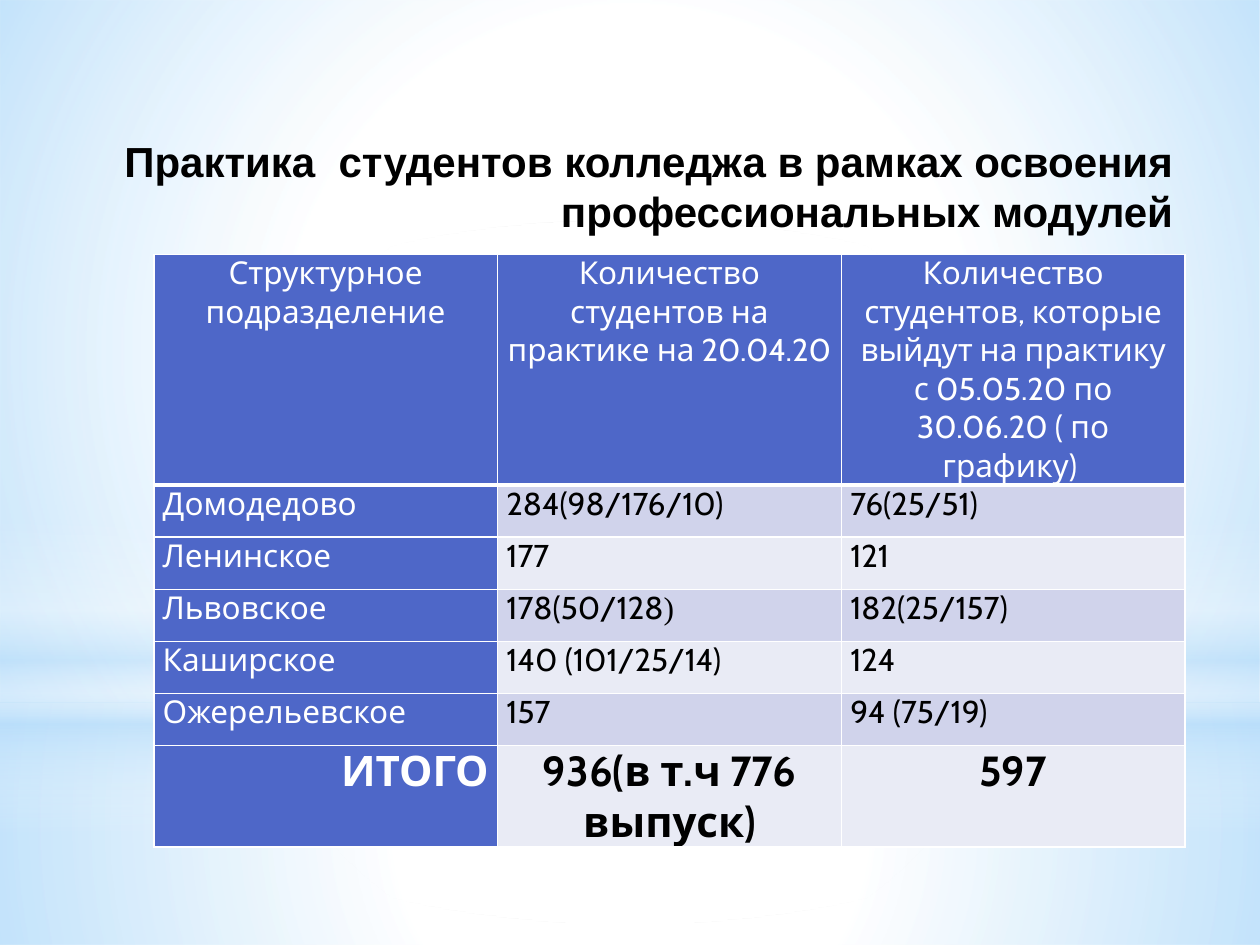
import pptx
import pptx.dml.color
import pptx.enum.shapes
import pptx.enum.text
import pptx.oxml
import pptx.oxml.ns
import pptx.util
from dataclasses import dataclass

Cm = pptx.util.Cm
Pt = pptx.util.Pt
ALIGN = pptx.enum.text.PP_ALIGN
SHAPE = pptx.enum.shapes.MSO_SHAPE
NS = pptx.oxml.ns.nsdecls("a")


@dataclass(frozen=True)
class Theme:
    white: str = "FFFFFF"
    black: str = "000000"
    sky: str = "B4DCFA"
    accent: str = "4E67C8"
    bands: tuple = ("D0D3EB", "E9EBF5")
    title_font: str = "Arial"
    body_font: str = "Cabin"
    bracket_font: str = "Times New Roman"
    large: int = 24
    body: int = 18


class Deck:
    def __init__(self, prs, theme):
        self.theme = theme
        self.s = prs.slides.add_slide(prs.slide_layouts[6])

    def style(self, r, size, color, bold=False, font=None):
        r.font.name = font or self.theme.body_font
        r.font.size = Pt(size)
        r.font.bold = bold
        r.font.color.rgb = pptx.dml.color.RGBColor.from_string(color)

    def glow(self, kind, top, height, stops, angle=None):
        """Full-width shape; stops are (position %, colour, opacity %)."""
        sp = self.s.shapes.add_shape(kind, 0, Cm(top), Cm(25.4), Cm(height))
        sp.shadow.inherit = False
        sp.line.fill.background()
        sp.fill.background()
        marks = "".join(
            f'<a:gs pos="{pos * 1000}"><a:srgbClr val="{color}">'
            f'<a:alpha val="{alpha * 1000}"/></a:srgbClr></a:gs>'
            for pos, color, alpha in stops)
        if angle is None:
            course = ('<a:path path="circle"><a:fillToRect l="50000" t="50000" '
                      'r="50000" b="50000"/></a:path>')
        else:
            course = f'<a:lin ang="{angle * 60000}" scaled="0"/>'
        grad = pptx.oxml.parse_xml(
            f'<a:gradFill {NS} rotWithShape="1"><a:gsLst>{marks}</a:gsLst>{course}</a:gradFill>')
        spPr = sp.element.spPr
        spPr.replace(spPr.find(pptx.oxml.ns.qn("a:noFill")), grad)

    def title(self, text, left, top, width, height):
        tf = self.s.shapes.add_textbox(Cm(left), Cm(top), Cm(width), Cm(height)).text_frame
        tf.word_wrap = True
        tf.margin_top = Cm(0.22)
        tf.text = text
        p = tf.paragraphs[0]
        p.alignment = ALIGN.RIGHT
        self.style(p.runs[0], self.theme.large, self.theme.black, True, self.theme.title_font)

    def border(self, cell, bottom):
        tcPr = cell._tc.get_or_add_tcPr()
        for side, width in (("L", 1), ("R", 1), ("T", 1), ("B", bottom)):
            tcPr.append(pptx.oxml.parse_xml(
                f'<a:ln{side} {NS} w="{Pt(width)}"><a:solidFill>'
                f'<a:srgbClr val="{self.theme.white}"/></a:solidFill></a:ln{side}>'))

    def cell(self, cell, text, fill, color, size, align, bold, bottom):
        cell.margin_left = cell.margin_right = Cm(0.18)
        cell.margin_top = cell.margin_bottom = 0
        self.border(cell, bottom)
        cell.fill.solid()
        cell.fill.fore_color.rgb = pptx.dml.color.RGBColor.from_string(fill)
        cell.text_frame.text = text
        p = cell.text_frame.paragraphs[0]
        p.alignment = align
        for r in p.runs:
            self.style(r, size, color, bold)

    def table(self, rows, left, top, col_width, heights):
        t = self.theme
        cols = len(rows[0])
        table = self.s.shapes.add_table(
            len(rows), cols, Cm(left), Cm(top), Cm(col_width * cols), Cm(sum(heights))).table
        for column in table.columns:
            column.width = Cm(col_width)
        last = len(rows) - 1
        for i, row in enumerate(rows):
            table.rows[i].height = Cm(heights[i])
            for j, text in enumerate(row):
                head = i == 0 or j == 0
                align = ALIGN.CENTER if i in (0, last) else ALIGN.LEFT
                if (i, j) == (last, 0):
                    align = ALIGN.RIGHT
                self.cell(table.cell(i, j), text,
                          t.accent if head else t.bands[(i - 1) % 2],
                          t.white if head else t.black,
                          t.large if i == last else t.body,
                          align, i == last, 3 if i == 0 else 1)
        return table


ROWS = [
    ("Структурное подразделение", "Количество студентов на практике на 20.04.20",
     "Количество студентов, которые выйдут на практику с 05.05.20 по 30.06.20 ( по графику) "),
    ("Домодедово", "284(98/176/10)", "76(25/51)"),
    ("Ленинское", "177", "121"),
    ("Львовское", "178(50/128", "182(25/157)"),
    ("Каширское", "140 (101/25/14)", "124"),
    ("Ожерельевское", "157", "94 (75/19)"),
    ("ИТОГО", "936(в т.ч 776 выпуск)", "597"),
]


def main():
    prs = pptx.Presentation()
    prs.slide_width, prs.slide_height = Cm(25.4), Cm(19.05)
    t = Theme()
    deck = Deck(prs, t)

    # Background glows
    deck.glow(SHAPE.RECTANGLE, 14.17, 4.88,
              [(0, t.white, 91), (37, t.white, 76), (100, t.sky, 79)])
    deck.glow(SHAPE.RECTANGLE, 0, 14.17,
              [(0, t.white, 89), (48, t.white, 62), (100, t.sky, 79)])
    deck.glow(SHAPE.RECTANGLE, 10.46, 6.35,
              [(0, t.white, 0), (29, t.white, 30), (45, t.sky, 40),
               (55, t.white, 26), (65, t.sky, 60), (100, t.white, 0)], angle=90)
    deck.glow(SHAPE.OVAL, 4.45, 14.17, [(0, t.white, 100), (56, t.white, 0)])

    # Title
    deck.title("Практика  студентов колледжа в рамках освоения профессиональных модулей",
               2.11, 2.51, 21.79, 2.59)

    # Table of placements, with one bracket in its own font
    table = deck.table(ROWS, 3.1, 5.13, 6.93, [4.65] + [1.05] * 5 + [2.05])
    r = table.cell(3, 1).text_frame.paragraphs[0].add_run()
    r.text = ")"
    deck.style(r, t.body, t.black, font=t.bracket_font)

    prs.save("out.pptx")


if __name__ == "__main__":
    main()
